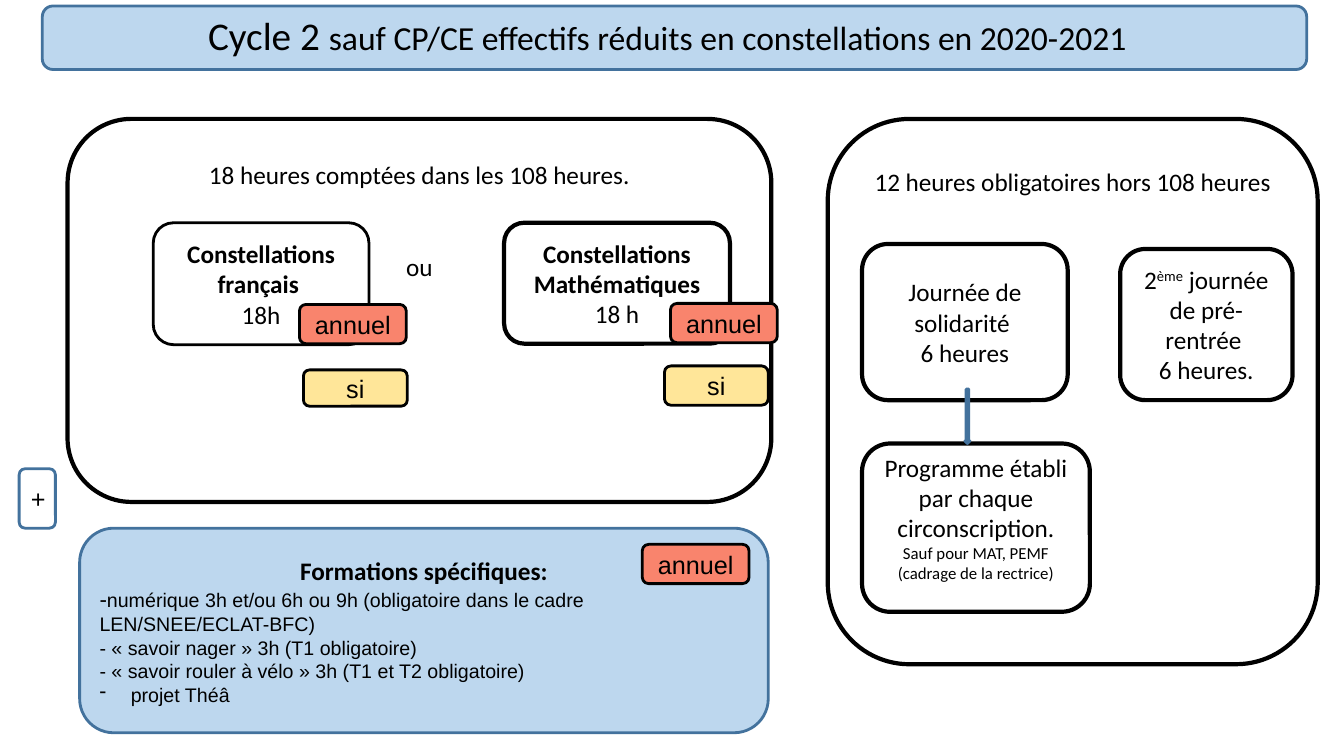
import pptx
import pptx.util
import pptx.dml.color
import pptx.enum.shapes
import pptx.enum.text
import lxml.etree
from pptx.oxml.ns import qn

Inches = pptx.util.Inches
Pt = pptx.util.Pt
SHAPES = pptx.enum.shapes.MSO_SHAPE
ALIGN = pptx.enum.text.PP_ALIGN
ANCHOR = pptx.enum.text.MSO_ANCHOR

COLORS = {
    "black": "000000", "white": "FFFFFF", "sky": "BDD7EE", "blue": "43729D",
    "arrow": "5B9BD5", "coral": "F9846D", "sand": "FFE699",
}
BODY = {"name": "Calibri", "size": Pt(18)}
BOLD = {**BODY, "bold": True}
SMALL = {**BODY, "size": Pt(12)}
LABEL = {"name": "Arial", "size": Pt(18)}
DETAIL = {"name": "Arial", "size": Pt(14)}
DASH = {"name": "Arial", "size": Pt(16)}
LEFT = {"alignment": ALIGN.LEFT}

# A paragraph is a list of (text, font) spans; a box is (place, fill, line, width, paragraphs, frame).
TITLE = [[("Cycle 2 ", {**BODY, "size": Pt(28)}),
          ("sauf CP/CE effectifs réduits en constellations en 2020-2021", {**BODY, "size": Pt(24)})]]
TRAINING = [
    [("Formations spécifiques:", BOLD)],
    [("-", DASH), ("numérique 3h et/ou 6h ou 9h (obligatoire dans le cadre LEN/SNEE/ECLAT-BFC)", DETAIL)],
    [("- « savoir nager » 3h (T1 obligatoire)", DETAIL)],
    [("- « savoir rouler à vélo » 3h (T1 et T2 obligatoire)", DETAIL)],
    [("projet Théâ", DETAIL)],
]
PANELS = [
    ((0.67, 1.18, 6.98, 3.8), "white", "black", 3,
     [[("18 heures comptées dans les 108 heures.", BODY)], [("ou", BODY)]],
     {"vertical_anchor": ANCHOR.TOP, "margin_top": Inches(0.22)}),
    ((8.21, 1.18, 4.86, 5.41), "white", "black", 3,
     [[("12 heures obligatoires hors 108 heures", BODY)]],
     {"vertical_anchor": ANCHOR.TOP, "margin_top": Inches(0.23)}),
]
CARDS = [
    ((5, 2.21, 2.24, 1.2), "white", "black", 3,
     [[("Constellations Mathématiques", BOLD)], [("18 h", BODY)]], {}),
    ((8.55, 2.42, 2.04, 1.55), "white", "black", 3,
     [[("Journée de solidarité ", BODY)], [("6 heures", BODY)]], {}),
    ((11.11, 2.47, 1.71, 1.5), "white", "black", 3,
     [[("2", BODY), ("ème", BODY), (" journée de pré-rentrée ", BODY)], [("6 heures.", BODY)]], {}),
    ((8.55, 4.4, 2.26, 1.67), None, "black", 3,
     [[("Programme établi par chaque circonscription.", BODY)],
      [("Sauf pour MAT, PEMF (cadrage de la rectrice)", SMALL)]],
     {"margin_bottom": Inches(0.25)}),
    ((1.52, 2.21, 2.14, 1.21), "white", "black", 2,
     [[("Constellations français ", BOLD)], [("18h", BODY)]], {}),
]
TRAINING_BOX = ((0.79, 5.24, 6.83, 2.03), "sky", "blue", 2, TRAINING, {})
TAGS = [
    ("annuel", (2.97, 3.02, 1.06, 0.39), "coral", "black"),
    ("annuel", (6.65, 3.01, 1.06, 0.39), "coral", "black"),
    ("annuel", (6.37, 5.4, 1.06, 0.39), "coral", "black"),
    ("si", (3.01, 3.67, 1.03, 0.36), "sand", "black"),
    ("si", (6.59, 3.63, 1.03, 0.39), "sand", "black"),
    ("+", (0.19, 4.65, 0.36, 0.59), "white", "blue"),
]


def rgb(name):
    return pptx.dml.color.RGBColor.from_string(COLORS[name])


def apply(target, values):
    for name, value in values.items():
        setattr(target, name, value)


def write(frame, paragraphs, values):
    apply(frame, {"word_wrap": True, "vertical_anchor": ANCHOR.MIDDLE, **values})
    for index, spans in enumerate(paragraphs):
        para = frame.paragraphs[0] if index == 0 else frame.add_paragraph()
        para.alignment = ALIGN.CENTER
        for text, font in spans:
            span = para.add_run()
            span.text = text
            apply(span.font, font)
            span.font.color.rgb = rgb("black")


def add_box(slide, place, fill, line, width, paragraphs=(), values=None,
            kind=SHAPES.ROUNDED_RECTANGLE):
    box = slide.shapes.add_shape(kind, *map(Inches, place))
    box.shadow.inherit = False
    if fill:
        box.fill.solid()
        box.fill.fore_color.rgb = rgb(fill)
    else:
        box.fill.background()
    box.line.color.rgb = rgb(line)
    box.line.width = Pt(width)
    write(box.text_frame, paragraphs, values or {})
    return box


def add_dash_bullet(para):
    properties = para._p.get_or_add_pPr()
    properties.set("marL", str(Inches(0.31)))
    properties.set("indent", str(Inches(-0.31)))
    lxml.etree.SubElement(properties, qn("a:buChar")).set("char", "-")


def main():
    deck = pptx.Presentation()
    apply(deck, {"slide_width": Inches(13.33), "slide_height": Inches(7.5)})
    slide = deck.slides.add_slide(deck.slide_layouts[6])

    add_box(slide, (0.42, 0.06, 12.54, 0.63), "sky", "blue", 2)
    title = slide.shapes.add_textbox(*map(Inches, (0.1, 0.06, 13.04, 0.57)))
    write(title.text_frame, TITLE, {"vertical_anchor": ANCHOR.TOP})

    hours_panel, _ = [add_box(slide, *panel) for panel in PANELS]
    hours_panel.text_frame.paragraphs[1].space_before = Pt(44)

    cards = [add_box(slide, *card) for card in CARDS]
    ordinal = cards[2].text_frame.paragraphs[0].runs[1]
    ordinal.font._element.set("baseline", "30000")

    training = add_box(slide, *TRAINING_BOX)
    details = training.text_frame.paragraphs[1:]
    for para in details:
        apply(para, LEFT)
    add_dash_bullet(details[-1])

    add_box(slide, (9.57, 3.86, 0.05, 0.54), "arrow", "blue", 2, kind=SHAPES.DOWN_ARROW)
    for text, place, fill, line in TAGS:
        add_box(slide, place, fill, line, 2, [[(text, LABEL)]])

    deck.save("out.pptx")


if __name__ == "__main__":
    main()
